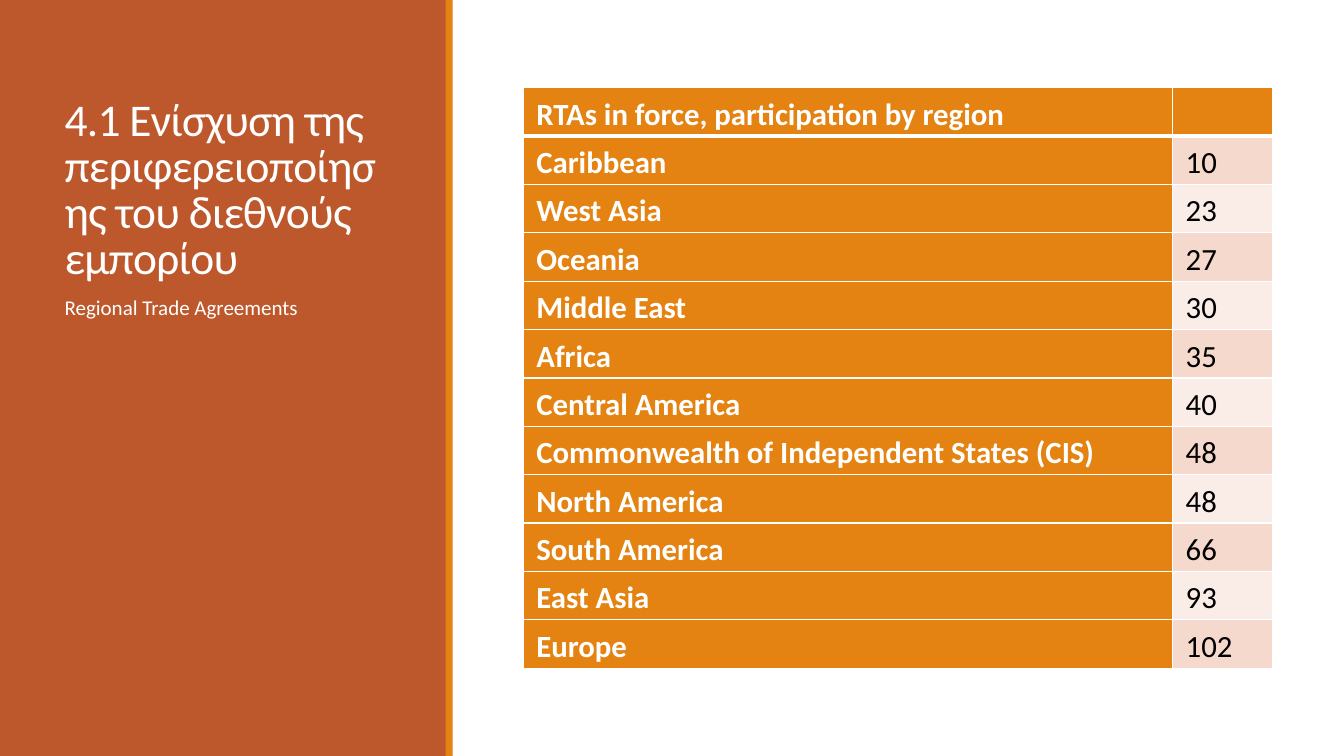
from lxml import etree
from pptx import Presentation
from pptx.dml.color import RGBColor
from pptx.enum.shapes import MSO_SHAPE
from pptx.enum.text import MSO_ANCHOR, MSO_AUTO_SIZE, PP_ALIGN
from pptx.oxml.ns import qn
from pptx.util import Inches, Pt

RECTANGLE = MSO_SHAPE.RECTANGLE
BOTTOM, MIDDLE, TOP = MSO_ANCHOR.BOTTOM, MSO_ANCHOR.MIDDLE, MSO_ANCHOR.TOP
LEFT = PP_ALIGN.LEFT
NO_AUTOFIT = MSO_AUTO_SIZE.NONE

COLORS = {
    "rust": "BD582C",
    "orange": "E48312",
    "band_dark": "F5D9CC",
    "band_light": "FAEDE7",
    "white": "FFFFFF",
    "black": "000000",
}
FONT = "Calibri"
HEADER = ("RTAs in force, participation by region", "")
REGIONS = [
    ("Caribbean", 10),
    ("West Asia", 23),
    ("Oceania", 27),
    ("Middle East", 30),
    ("Africa", 35),
    ("Central America", 40),
    ("Commonwealth of Independent States (CIS)", 48),
    ("North America", 48),
    ("South America", 66),
    ("East Asia", 93),
    ("Europe", 102),
]
TEXT_LEFT, TEXT_WIDTH = 0.54, 3.37
COLUMN_WIDTHS = (6.44, 0.99)
ROW_HEIGHT = 0.48


def format_paragraph(paragraph, size, color, spacing, bold=False):
    paragraph.alignment = LEFT
    paragraph.line_spacing = spacing
    paragraph.font.name = FONT
    paragraph.font.size = Pt(size)
    paragraph.font.bold = bold
    paragraph.font.color.rgb = RGBColor.from_string(COLORS[color])


def add_border(cell, side, points):
    """Draw a white line on one side (L, R, T or B); call before filling the cell."""
    properties = cell._tc.get_or_add_tcPr()
    line = etree.SubElement(properties, qn(f"a:ln{side}"), w=str(Pt(points)))
    fill = etree.SubElement(line, qn("a:solidFill"))
    etree.SubElement(fill, qn("a:srgbClr"), val=COLORS["white"])


presentation = Presentation()
presentation.slide_width = Inches(13.33)
presentation.slide_height = Inches(7.5)
slide = presentation.slides.add_slide(presentation.slide_layouts[1])
title, body = slide.shapes.title, slide.placeholders[1]

# Side panel and its edge, placed behind the text
for left, width, color in ((0, 4.43, "rust"), (4.42, 0.07, "orange")):
    panel = slide.shapes.add_shape(
        RECTANGLE, Inches(left), 0, Inches(width), presentation.slide_height)
    panel.shadow.inherit = False
    panel.fill.solid()
    panel.fill.fore_color.rgb = RGBColor.from_string(COLORS[color])
    panel.line.fill.background()
    title.element.addprevious(panel.element)

# Title and subtitle
for placeholder, text, top, height, anchor, size, spacing in (
    (title, "4.1 Ενίσχυση της περιφερειοποίησης του διεθνούς εμπορίου",
     0.57, 2.3, BOTTOM, 32.4, 0.85),
    (body, "Regional Trade Agreements", 2.9, 3.65, TOP, 15, 0.9),
):
    placeholder.left, placeholder.top = Inches(TEXT_LEFT), Inches(top)
    placeholder.width, placeholder.height = Inches(TEXT_WIDTH), Inches(height)
    frame = placeholder.text_frame
    frame.text = text
    frame.word_wrap = True
    frame.auto_size = NO_AUTOFIT
    frame.vertical_anchor = anchor
    format_paragraph(frame.paragraphs[0], size, "white", spacing)

title_run = title.text_frame.paragraphs[0].runs[0]
title_run._r.get_or_add_rPr().set("spc", "-50")

body.text_frame.margin_left = body.text_frame.margin_right = 0
subtitle = body.text_frame.paragraphs[0]
subtitle.space_before, subtitle.space_after = Pt(12), Pt(2)
subtitle_properties = subtitle._p.get_or_add_pPr()
subtitle_properties.set("marL", str(Inches(0.1)))
subtitle_properties.set("indent", "0")
etree.SubElement(subtitle_properties, qn("a:buNone"))
# Bullet settings must come before the default run properties
for default_run in subtitle_properties.findall(qn("a:defRPr")):
    subtitle_properties.append(default_run)

# Table of agreements by region
rows = [HEADER, *REGIONS]
table = slide.shapes.add_table(
    len(rows), len(COLUMN_WIDTHS), Inches(5.19), Inches(0.87),
    Inches(sum(COLUMN_WIDTHS)), Inches(ROW_HEIGHT * len(rows))).table
for column, width in zip(table.columns, COLUMN_WIDTHS):
    column.width = Inches(width)

for row_index, values in enumerate(rows):
    table.rows[row_index].height = Inches(ROW_HEIGHT)
    for column_index, value in enumerate(values):
        cell = table.cell(row_index, column_index)
        is_heading = row_index == 0 or column_index == 0
        band = "band_dark" if row_index % 2 else "band_light"
        add_border(cell, "L", 1)
        add_border(cell, "R", 1)
        add_border(cell, "T", 3 if row_index == 1 else 1)
        add_border(cell, "B", 3 if row_index == 0 else 1)
        cell.fill.solid()
        cell.fill.fore_color.rgb = RGBColor.from_string(
            COLORS["orange" if is_heading else band])
        cell.margin_left = cell.margin_right = Inches(0.13)
        cell.margin_top = cell.margin_bottom = 0
        cell.vertical_anchor = MIDDLE
        cell.text = str(value)
        format_paragraph(cell.text_frame.paragraphs[0], 22,
                         "white" if is_heading else "black", 1.15, is_heading)

presentation.save("out.pptx")
